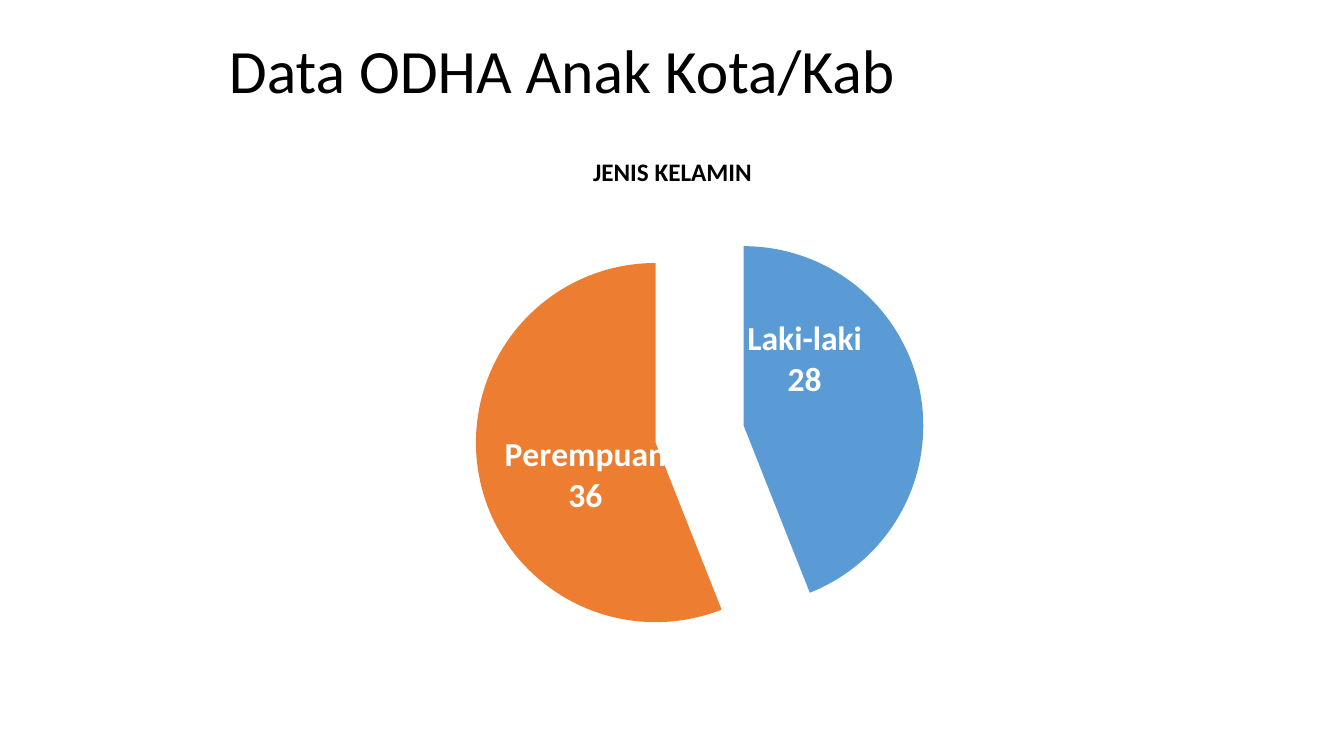
from lxml.etree import SubElement
from pptx import Presentation
from pptx.chart.data import CategoryChartData
from pptx.dml.color import RGBColor
from pptx.enum.chart import XL_CHART_TYPE, XL_LABEL_POSITION
from pptx.enum.text import MSO_ANCHOR
from pptx.oxml.ns import qn
from pptx.util import Emu, Pt

EMU_PER_PX = 914400 / 100.8


def px(length):
    return Emu(round(length * EMU_PER_PX))


def colour(value):
    return RGBColor.from_string(value)


def manual_layout(**settings):
    layout = SubElement(SubElement(settings.pop("parent"), qn("c:layout")), qn("c:manualLayout"))
    for name, value in settings.items():
        SubElement(layout, qn(f"c:{name}")).set("val", str(value))
    return layout.getparent()


class SlideBuilder:
    font_name = "Calibri"
    ink = "000000"
    label_ink = "FFFFFF"

    def __init__(self, presentation):
        self.slide = presentation.slides.add_slide(presentation.slide_layouts[6])

    def style(self, font, size, ink, bold=False):
        font.name = self.font_name
        font.size = Pt(size)
        font.bold = bold
        font.color.rgb = colour(ink)

    def heading(self, text, left, top, width, height):
        frame = self.slide.shapes.add_textbox(px(left), px(top), px(width), px(height)).text_frame
        frame.word_wrap = True
        frame.vertical_anchor = MSO_ANCHOR.MIDDLE
        frame.text = text
        paragraph = frame.paragraphs[0]
        paragraph.line_spacing = 0.9
        self.style(paragraph.font, 44, self.ink)

    def pie(self, title, slices, left, top, width, height):
        data = CategoryChartData()
        data.categories = [name for name, *_ in slices]
        data.add_series("Series 1", [share for _, share, *_ in slices])
        chart = self.slide.shapes.add_chart(
            XL_CHART_TYPE.PIE, px(left), px(top), px(width), px(height), data
        ).chart
        self.style(chart.font, 10, self.ink)
        chart.has_legend = False
        chart.has_title = True
        chart.chart_title.text_frame.text = title
        self.style(chart.chart_title.text_frame.paragraphs[0].font, 18, self.ink, True)

        plot = chart.plots[0]
        plot.vary_by_categories = True
        plot_area = plot._element.getparent()
        for automatic in plot_area.findall(qn("c:layout")):
            plot_area.remove(automatic)
        plot_area.insert(0, manual_layout(
            parent=plot_area, layoutTarget="inner", xMode="edge", yMode="edge",
            x=0.28, y=0.14, w=0.5, h=0.83))

        series = plot.series[0]
        for index, (name, _, count, fill, shift_x, shift_y) in enumerate(slices):
            point = series.points[index]
            point.format.fill.solid()
            point.format.fill.fore_color.rgb = colour(fill)
            label = point.data_label
            label.text_frame.text = f"{name}\n{count}"
            for paragraph in label.text_frame.paragraphs:
                self.style(paragraph.runs[0].font, 24, self.label_ink, True)
            label.position = XL_LABEL_POSITION.CENTER
            element = label._dLbl
            element.insert(1, manual_layout(parent=element, x=shift_x, y=shift_y))

        labels = plot.series[0].data_labels
        self.style(labels.font, 24, self.label_ink, True)
        labels.show_value = False
        labels.show_percentage = True
        labels.show_category_name = True
        explosion = SubElement(series._element, qn("c:explosion"))
        explosion.set("val", "25")
        series._element.find(qn("c:dPt")).addprevious(explosion)


def main():
    presentation = Presentation()
    presentation.slide_width = px(1344)
    presentation.slide_height = px(756)
    builder = SlideBuilder(presentation)
    builder.heading("Data ODHA Anak Kota/Kab", 219, 30, 907, 88)
    builder.pie("JENIS KELAMIN", [
        ("Laki-laki", 44, 28, "5B9BD5", -0.03, -0.09),
        ("Perempuan", 56, 36, "ED7D31", 0.02, 0.03),
    ], 219, 134, 907, 541)
    presentation.save("out.pptx")


if __name__ == "__main__":
    main()
